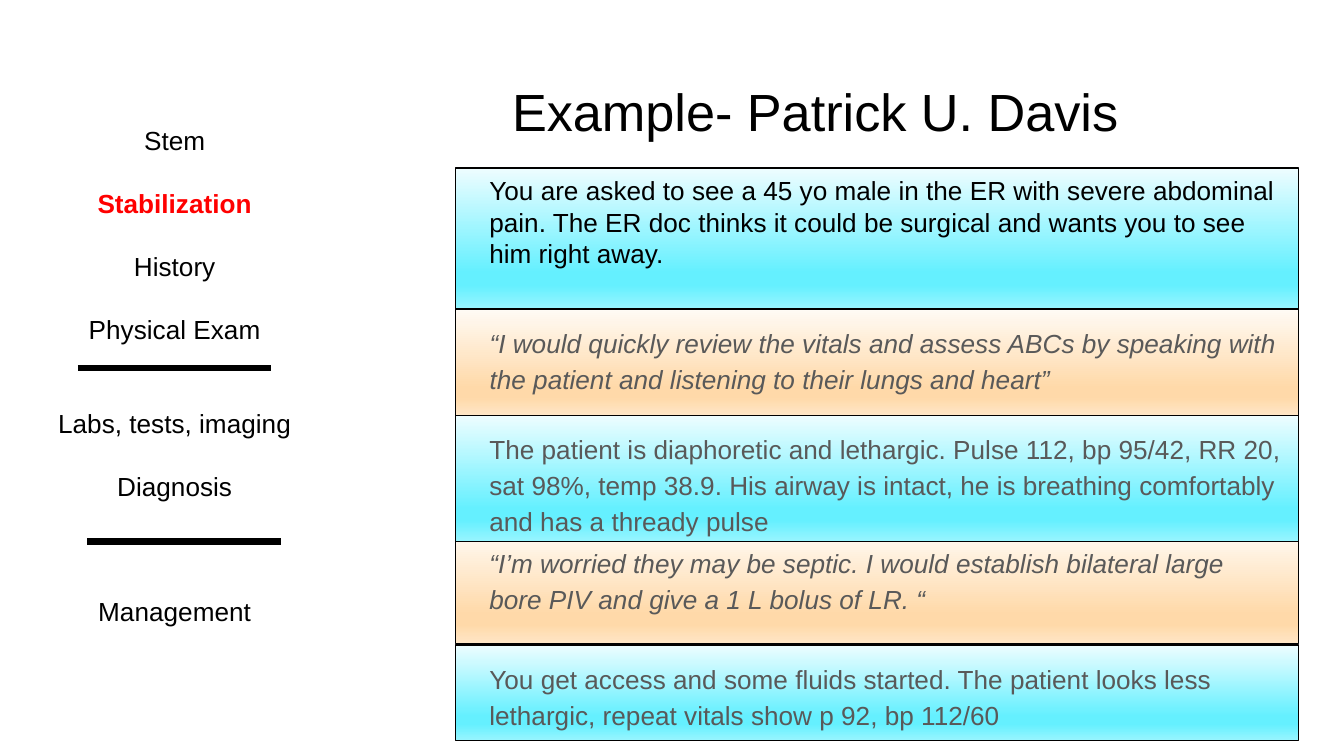
from lxml import etree
from pptx import Presentation
from pptx.dml.color import RGBColor
from pptx.enum import shapes, text
from pptx.oxml.ns import qn
from pptx.util import Inches, Pt

BLACK = RGBColor(0x00, 0x00, 0x00)
GREY = RGBColor(0x59, 0x59, 0x59)
RED = RGBColor(0xFF, 0x00, 0x00)
BLUES = [RGBColor.from_string(c) for c in ("EEFDFF", "65F0FF", "65F0FF", "98F5FF")]
ORANGES = [RGBColor.from_string(c) for c in ("FFFBF5", "FFD9A9", "FFD9A9", "FFE6C6")]
STOPS = (0, 74, 83, 100)

TITLE = "Example- Patrick U. Davis"
STEPS = [
    ("Stem", 0), ("Stabilization", 1), ("History", 1), ("Physical Exam", 1),
    ("Labs, tests, imaging", 2), ("Diagnosis", 1), ("Management", 3),
]
CURRENT_STEP = "Stabilization"
DIVIDERS = [(0.58, 2.74), (0.65, 4.03)]
DIVIDER_WIDTH = 1.44
STEP_LINE = 16.8

SPOKEN = {"size": Pt(14), "name": "Arial", "italic": True}
NARRATED = {**SPOKEN, "italic": False}
ANSWER = {
    "top": 2.3, "height": 0.79, "colours": ORANGES, "font": SPOKEN,
    "words": "“I would quickly review the vitals and assess ABCs by speaking with "
             "the patient and listening to their lungs and heart”",
}
DIALOGUE = [
    {"top": 1.25, "height": 1.05, "colours": BLUES, "font": NARRATED,
     "ink": BLACK, "inset": 0.05, "spacing": 1.0,
     "words": "You are asked to see a 45 yo male in the ER with severe abdominal pain. "
              "The ER doc thinks it could be surgical and wants you to see him right away."},
    {"top": 3.94, "height": 0.85, "colours": ORANGES, "font": SPOKEN, "right": 0.13,
     "words": "“I’m worried they may be septic. I would establish bilateral large "
              "bore PIV and give a 1 L bolus of LR. “"},
    {"top": 3.09, "height": 0.94, "colours": BLUES, "font": NARRATED,
     "words": "The patient is diaphoretic and lethargic. Pulse 112, bp 95/42, RR 20, "
              "sat 98%, temp 38.9. His airway is intact, he is breathing comfortably "
              "and has a thready pulse"},
    {"top": 4.8, "height": 0.71, "colours": BLUES, "font": NARRATED,
     "words": "You get access and some fluids started. The patient looks less "
              "lethargic, repeat vitals show p 92, bp 112/60"},
]
CARD_LEFT, CARD_WIDTH = 3.39, 6.27
CARD_INDENT = Pt(11)


def apply(target, values):
    for name, value in values.items():
        setattr(target, name, value)


def place(part, left, top, width, height):
    apply(part, {"left": Inches(left), "top": Inches(top),
                 "width": Inches(width), "height": Inches(height)})


def set_frame(frame, inset, right=0.1, wrap=True, fit=text.MSO_AUTO_SIZE.NONE):
    apply(frame, {"word_wrap": wrap, "auto_size": fit,
                  "vertical_anchor": text.MSO_ANCHOR.TOP,
                  "margin_left": Inches(0.1), "margin_right": Inches(right),
                  "margin_top": Inches(inset), "margin_bottom": Inches(inset)})


def write(paragraph, words, font, ink, align=text.PP_ALIGN.LEFT, before=0, spacing=1.0):
    run = paragraph.add_run()
    run.text = words
    apply(run.font, font)
    run.font.color.rgb = ink
    apply(paragraph, {"alignment": align, "space_before": Pt(before),
                      "space_after": Pt(0), "line_spacing": spacing})


def fill_gradient(card, colours):
    card.fill.gradient()
    card.fill.gradient_angle = 270
    stops = card._element.spPr.find(qn("a:gradFill")).find(qn("a:gsLst"))
    for old in list(stops):
        stops.remove(old)
    for position, colour in zip(STOPS, colours):
        stop = etree.SubElement(stops, qn("a:gs"), pos=str(position * 1000))
        etree.SubElement(stop, qn("a:srgbClr"), val=str(colour))


def dress_card(card, content):
    place(card, CARD_LEFT, content["top"], CARD_WIDTH, content["height"])
    fill_gradient(card, content["colours"])
    card.line.color.rgb = BLACK
    card.line.width = Pt(0.75)
    set_frame(card.text_frame, content.get("inset", 0.1), content.get("right", 0.1))
    paragraph = card.text_frame.paragraphs[0]
    write(paragraph, content["words"], content["font"], content.get("ink", GREY),
          spacing=content.get("spacing", 1.15))
    properties = paragraph._p.get_or_add_pPr()
    properties.attrib.update({"marL": str(CARD_INDENT), "indent": "0"})
    etree.SubElement(properties, qn("a:buNone"))


deck = Presentation()
deck.slide_width = Inches(10)
deck.slide_height = deck.slide_width * 9 // 16
slide = deck.slides.add_slide(deck.slide_layouts[1])

title = slide.shapes.title
place(title, 3.71, 0.49, 5.95, 0.63)
set_frame(title.text_frame, 0.1)
write(title.text_frame.paragraphs[0], TITLE, {"size": Pt(28), "name": "Arial"}, BLACK)

dress_card(slide.placeholders[1], ANSWER)

outline = slide.shapes.add_group_shape()
steps = outline.shapes.add_textbox(Inches(0.33), Inches(0.88), Inches(1.94), Inches(3.87))
set_frame(steps.text_frame, 0.05, wrap=False, fit=text.MSO_AUTO_SIZE.SHAPE_TO_FIT_TEXT)
for number, (step, gap) in enumerate(STEPS):
    paragraph = steps.text_frame.add_paragraph() if number else steps.text_frame.paragraphs[0]
    current = step == CURRENT_STEP
    write(paragraph, step, {**NARRATED, "bold": current}, RED if current else BLACK,
          text.PP_ALIGN.CENTER, gap * STEP_LINE)

for left, top in DIVIDERS:
    divider = outline.shapes.add_connector(
        shapes.MSO_CONNECTOR.STRAIGHT, Inches(left), Inches(top),
        Inches(left + DIVIDER_WIDTH), Inches(top))
    divider.line.color.rgb = BLACK
    divider.line.width = Pt(3.5)
    etree.SubElement(divider._element.spPr, qn("a:effectLst"))

for content in DIALOGUE:
    card = slide.shapes.add_shape(shapes.MSO_SHAPE.RECTANGLE, 0, 0, 0, 0)
    card.shadow.inherit = False
    dress_card(card, content)

deck.save("out.pptx")
